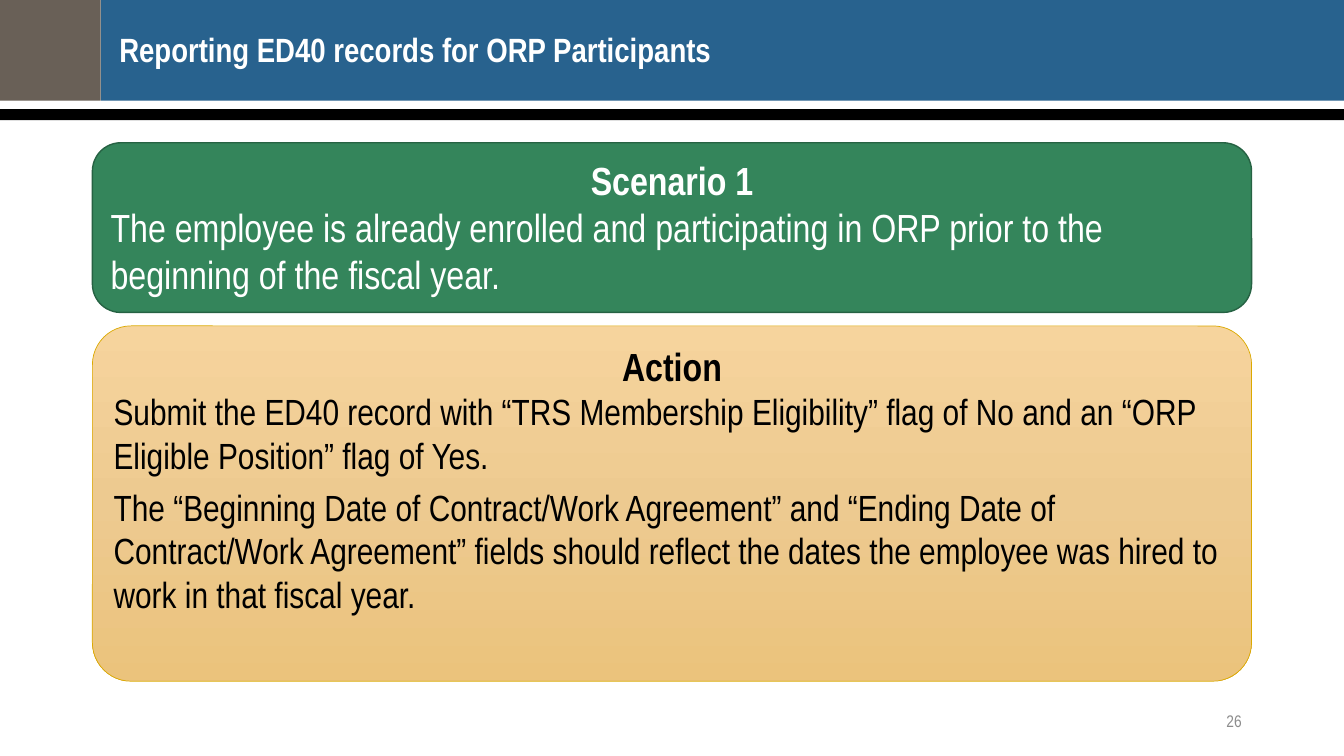
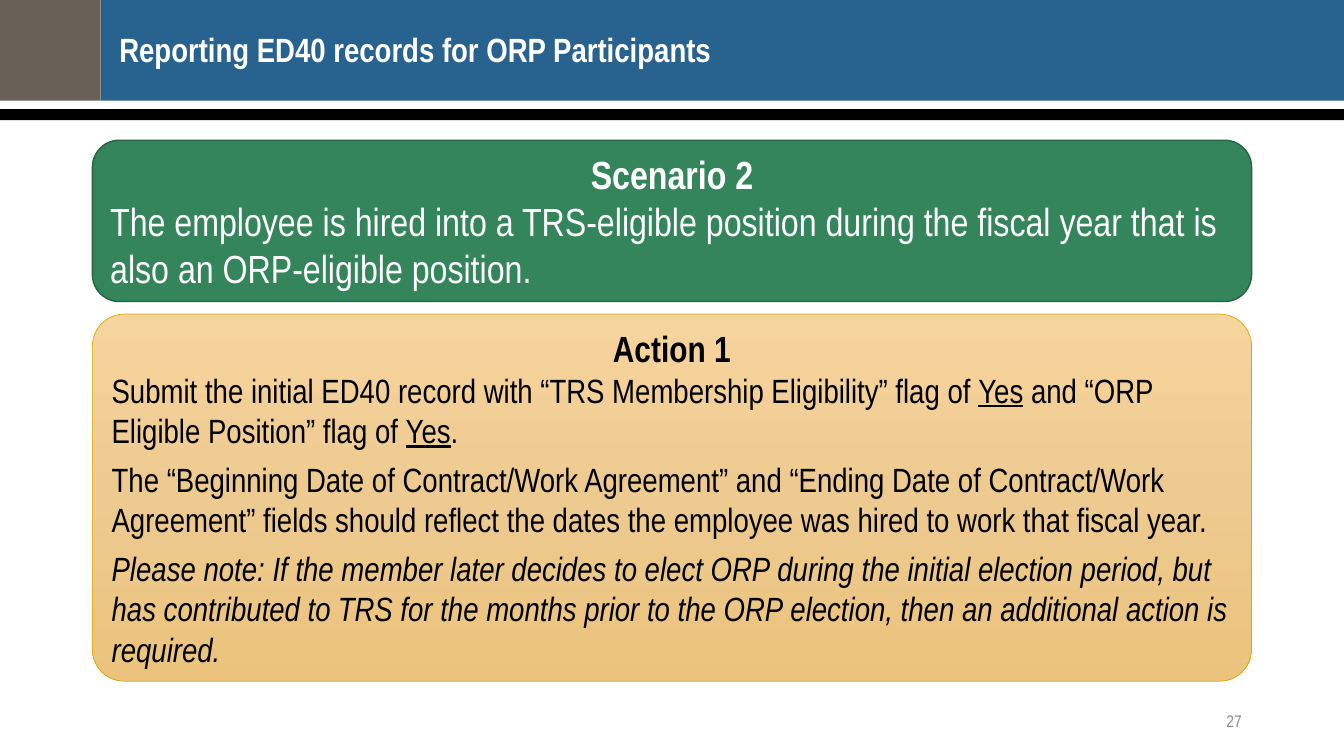
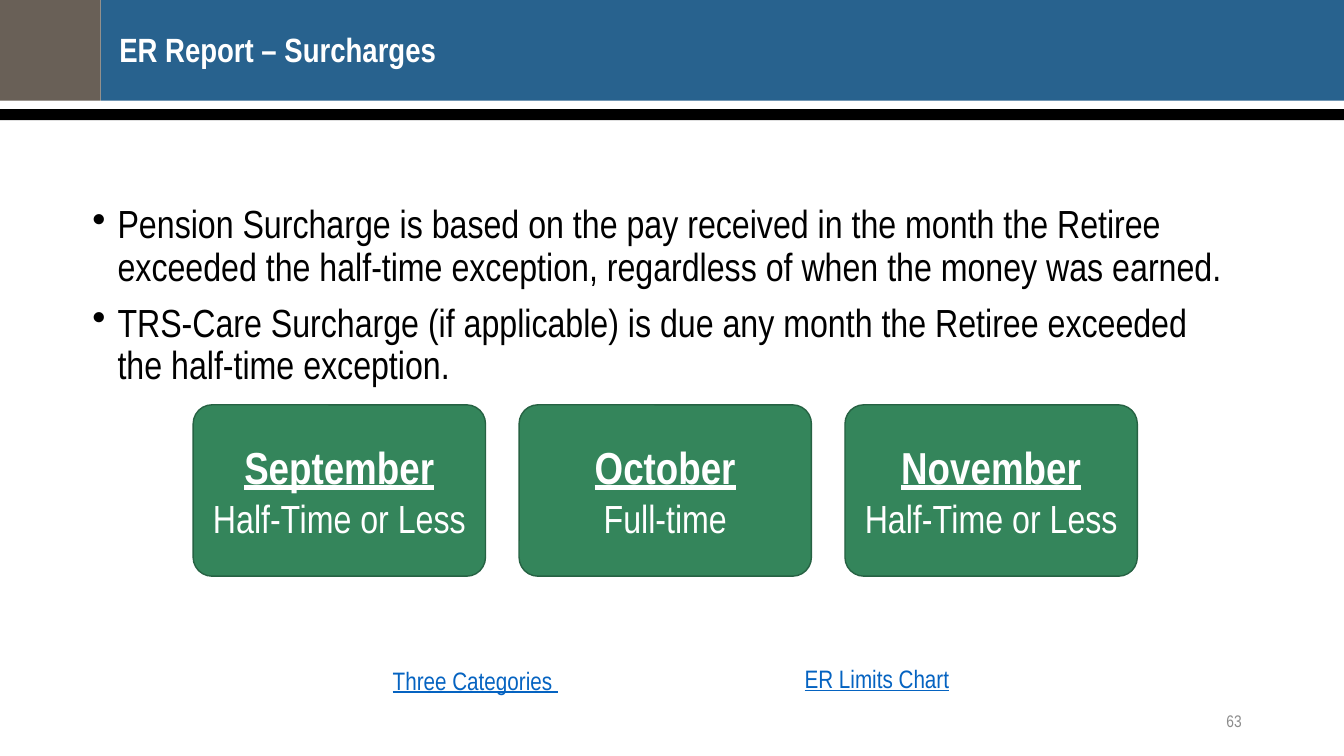
"""Builds three training slides on retirement reporting."""
from copy import deepcopy
from dataclasses import dataclass

from pptx import Presentation
from pptx.dml.color import RGBColor as Rgb
from pptx.enum.shapes import MSO_SHAPE as Shape
from pptx.enum.text import MSO_ANCHOR as Anchor, MSO_AUTO_SIZE as AutoSize, PP_ALIGN as Align
from pptx.oxml.ns import qn
from pptx.util import Inches, Pt

COLUMNS, ROWS = 160, 90


@dataclass(frozen=True)
class Theme:
    """Colours and type sizes of the deck."""
    font: str = "Arial Narrow"
    white: str = "FFFFFF"
    black: str = "000000"
    blue: str = "28628E"
    taupe: str = "696057"
    green: str = "34855B"
    green_edge: str = "266243"
    sand: tuple = ("F6D49D", "EDCA90", "EBC37C")
    sand_edge: str = "DBA900"
    link: str = "0563C1"
    grey: str = "8C8C8C"
    month: int = 32
    large: int = 28
    medium: int = 26
    small: int = 24
    caption: int = 18
    number: int = 12


@dataclass
class Line:
    """One paragraph, with underlined words between underscores."""
    text: str
    size: int
    align: Align = Align.LEFT
    bold: bool = False
    italic: bool = False
    before: int = 0
    after: int = 0
    spacing: float = 1.0
    bullet: bool = False


class Slides:
    """Holds the deck, its theme and the current page."""

    def __init__(self, theme):
        """Starts a wide deck."""
        self.theme = theme
        self.deck = Presentation()
        self.deck.slide_width, self.deck.slide_height = Inches(13.333), Inches(7.5)
        self.page = None

    def place(self, left, top, width, height):
        """Turns grid columns and rows into lengths."""
        column, row = self.deck.slide_width / COLUMNS, self.deck.slide_height / ROWS
        return [round(n) for n in (left * column, top * row, width * column, height * row)]

    def start(self, title, number):
        """Adds a page with bands, title and page number."""
        theme = self.theme
        self.page = self.deck.slides.add_slide(self.deck.slide_layouts[6])
        self.band((12, 0, COLUMNS - 12, 12), theme.blue)
        self.band((0, 0, 12, 12), theme.taupe)
        self.band((0, 13, COLUMNS, 1.3), theme.black)
        self.text((14.2, 4, 134.8, 6.7), [Line(title, theme.small, bold=True, spacing=0.9)],
                  theme.white, inset=False)
        self.text((113, 83.4, 36, 4.8), [Line(str(number), theme.number, Align.RIGHT)],
                  theme.grey, Anchor.MIDDLE)

    def band(self, area, colour):
        """Adds a plain rectangle without outline."""
        box = self.page.shapes.add_shape(Shape.RECTANGLE, *self.place(*area))
        box.shadow.inherit = False
        box.fill.solid()
        box.fill.fore_color.rgb = Rgb.from_string(colour)
        box.line.fill.background()

    def text(self, area, lines, colour, anchor=Anchor.TOP, inset=True, grow=False):
        """Adds a wrapped text box."""
        frame = self.page.shapes.add_textbox(*self.place(*area)).text_frame
        if not inset:
            frame.margin_left = frame.margin_top = frame.margin_right = frame.margin_bottom = 0
        if grow:
            frame.auto_size = AutoSize.SHAPE_TO_FIT_TEXT
        self.fill_frame(frame, lines, colour, anchor)

    def card(self, area, lines, corner=0.167, anchor=Anchor.MIDDLE, sandy=False):
        """Adds a rounded green or sand card."""
        theme = self.theme
        box = self.page.shapes.add_shape(Shape.ROUNDED_RECTANGLE, *self.place(*area))
        box.shadow.inherit = False
        box.adjustments[0] = corner
        if sandy:
            self.shade(box, theme.sand)
        else:
            box.fill.solid()
            box.fill.fore_color.rgb = Rgb.from_string(theme.green)
        box.line.color.rgb = Rgb.from_string(theme.sand_edge if sandy else theme.green_edge)
        box.line.width = Pt(0.5 if sandy else 1)
        self.fill_frame(box.text_frame, lines, theme.black if sandy else theme.white, anchor)

    def shade(self, box, colours):
        """Fills a shape from top to bottom with three colours."""
        box.fill.gradient()
        box.fill.gradient_angle = 270
        stops = box._element.spPr.find(qn("a:gradFill")).find(qn("a:gsLst"))
        stops.insert(1, deepcopy(stops[0]))
        for index, (stop, colour) in enumerate(zip(box.fill.gradient_stops, colours)):
            stop.position = index / 2
            stop.color.rgb = Rgb.from_string(colour)

    def fill_frame(self, frame, lines, colour, anchor):
        """Puts formatted paragraphs into a frame."""
        frame.word_wrap = True
        frame.vertical_anchor = anchor
        for index, line in enumerate(lines):
            para = frame.add_paragraph() if index else frame.paragraphs[0]
            if line.bullet:
                self.bullet(para)
            para.alignment = line.align
            para.line_spacing = line.spacing
            para.space_before = Pt(line.before if index else 0)
            para.space_after = Pt(line.after)
            for part, words in enumerate(line.text.split("_")):
                if words:
                    span = para.add_run()
                    span.text = words
                    self.style(span.font, line, colour, part % 2 == 1)

    def style(self, font, line, colour, underline):
        """Formats one run."""
        font.name, font.size = self.theme.font, Pt(line.size)
        font.bold, font.italic, font.underline = line.bold, line.italic, underline
        font.color.rgb = Rgb.from_string(colour)

    def bullet(self, para):
        """Gives a paragraph a hanging bullet."""
        properties = para._p.get_or_add_pPr()
        properties.set("marL", str(Inches(0.25)))
        properties.set("indent", str(-Inches(0.25)))
        mark = properties.makeelement(qn("a:buChar"), {"char": "•"})
        properties.append(mark)

    def scenario(self, number, top, height, situation, anchor):
        """Adds the green card that states a scenario."""
        size = self.theme.large
        self.card((11, top, 138, height),
                  [Line(f"Scenario {number}", size, Align.CENTER, bold=True), Line(situation, size)],
                  anchor=anchor)

    def action(self, heading, top, sizes, steps, corner, anchor, note=None):
        """Adds the sand card that lists what to do."""
        heading_size, step_size = sizes
        lines = [Line(heading, heading_size, Align.CENTER, bold=True)]
        lines += [Line(step, step_size, after=6) for step in steps]
        if note:
            lines.append(Line(note, step_size, italic=True, after=6))
        self.card((11, top, 138, 81.1 - top), lines, corner, anchor, sandy=True)


def main():
    """Builds and saves the deck."""
    theme = Theme()
    slides = Slides(theme)
    participants = "Reporting ED40 records for ORP Participants"

    slides.start(participants, 26)
    slides.scenario(1, 17, 20.2, "The employee is already enrolled and participating in ORP "
                    "prior to the beginning of the fiscal year.", Anchor.TOP)
    slides.action("Action", 38.8, (theme.large, theme.medium), [
        "Submit the ED40 record with “TRS Membership Eligibility” flag of No and an "
        "“ORP Eligible Position” flag of Yes.",
        "The “Beginning Date of Contract/Work Agreement” and “Ending Date of Contract/Work "
        "Agreement” fields should reflect the dates the employee was hired to work in that "
        "fiscal year.",
    ], 0.109, Anchor.TOP)

    slides.start(participants, 27)
    slides.scenario(2, 16.7, 19.2, "The employee is hired into a TRS-eligible position during "
                    "the fiscal year that is also an ORP-eligible position.", Anchor.MIDDLE)
    slides.action("Action 1", 37.4, (theme.medium, theme.small), [
        "Submit the initial ED40 record with “TRS Membership Eligibility” flag of _Yes_ and "
        "“ORP Eligible Position” flag of _Yes_.",
        "The “Beginning Date of Contract/Work Agreement” and “Ending Date of Contract/Work "
        "Agreement” fields should reflect the dates the employee was hired to work that "
        "fiscal year.",
    ], 0.087, Anchor.MIDDLE,
        "Please note: If the member later decides to elect ORP during the initial election "
        "period, but has contributed to TRS for the months prior to the ORP election, then an "
        "additional action is required.")

    slides.start("ER Report – Surcharges", 63)
    surcharges = [
        "Pension Surcharge is based on the pay received in the month the Retiree exceeded the "
        "half-time exception, regardless of when the money was earned.",
        "TRS-Care Surcharge (if applicable) is due any month the Retiree exceeded the "
        "half-time exception.",
    ]
    slides.text((11, 24.4, 136.4, 27.1),
                [Line(words, theme.large, before=10, spacing=0.9, bullet=True)
                 for words in surcharges], theme.black, inset=False)
    months = [("September", "Half-Time or Less"), ("October", "Full-time"),
              ("November", "Half-Time or Less")]
    for index, (month, workload) in enumerate(months):
        slides.card((23 + index * 38.8, 48.2, 34.8, 20.4),
                    [Line(f"_{month}_", theme.month, Align.CENTER, bold=True),
                     Line(workload, theme.large, Align.CENTER)], 0.11)
    for left, top, label in [(33.2, 78.6, "Three Categories "), (81, 78.4, "ER Limits Chart")]:
        slides.text((left, top, 46.8, 4.8), [Line(f"_{label}_", theme.caption, Align.CENTER)],
                    theme.link, grow=True)

    slides.deck.save("out.pptx")


if __name__ == "__main__":
    main()
